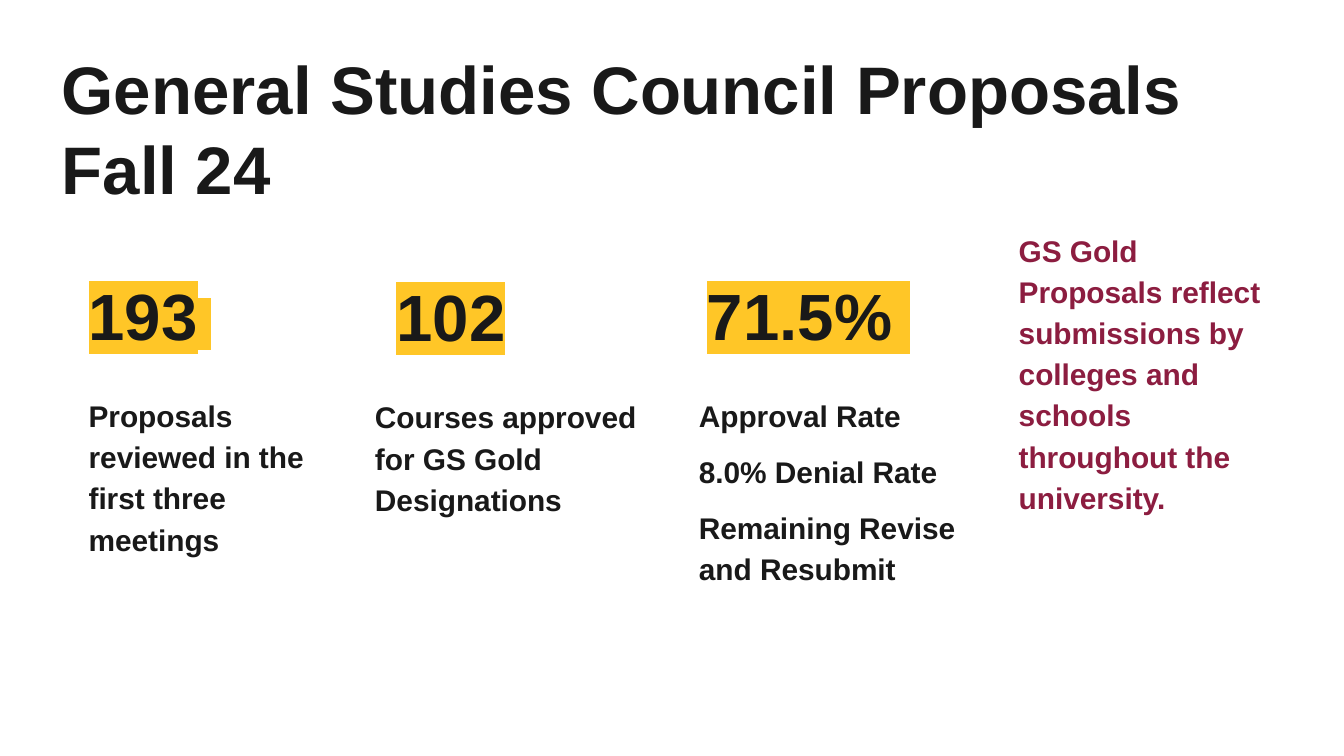
from lxml.etree import SubElement
from pptx import Presentation
from pptx.dml.color import RGBColor
from pptx.enum.shapes import MSO_SHAPE
from pptx.enum.text import MSO_ANCHOR, PP_ALIGN
from pptx.oxml.ns import qn
from pptx.util import Inches, Pt

INK = RGBColor(0x19, 0x19, 0x19)
MAROON = RGBColor(0x8C, 0x1D, 0x40)
GOLD = RGBColor(0xFF, 0xC6, 0x27)
WHITE = RGBColor(0xFF, 0xFF, 0xFF)
FONT = "Arial"


def set_frame(shape, left, top, right, bottom):
    """Set wrapping, top anchoring and insets, and return the text frame."""
    frame = shape.text_frame
    frame.word_wrap = True
    frame.vertical_anchor = MSO_ANCHOR.TOP
    frame.margin_left, frame.margin_top = Inches(left), Inches(top)
    frame.margin_right, frame.margin_bottom = Inches(right), Inches(bottom)
    return frame


def add_run(paragraph, text, size, color=INK, highlight=None):
    """Append a bold run, with an optional highlight color."""
    run = paragraph.add_run()
    run.text = text
    run.font.size = Pt(size)
    run.font.bold = True
    run.font.color.rgb = color
    if highlight is not None:
        mark = SubElement(run.font._element, qn("a:highlight"))
        SubElement(mark, qn("a:srgbClr")).set("val", str(highlight))
    run.font.name = FONT


def add_text_box(slide, left, top, width, height, insets):
    """Add a text box and return its text frame."""
    box = slide.shapes.add_textbox(Inches(left), Inches(top), Inches(width), Inches(height))
    return set_frame(box, *insets)


def add_title(slide, text):
    """Add the slide heading."""
    frame = add_text_box(slide, 0.46, 0.35, 9.2, 0.5, (0, 0, 0, 0))
    add_run(frame.paragraphs[0], text, 36)


def add_figure(slide, left, top, runs):
    """Add a white card with a large highlighted number."""
    card = slide.shapes.add_shape(
        MSO_SHAPE.RECTANGLE, Inches(left), Inches(top), Inches(2.13), Inches(1.85)
    )
    card.shadow.inherit = False
    card.fill.solid()
    card.fill.fore_color.rgb = WHITE
    card.line.fill.background()
    paragraph = set_frame(card, 0.2, 0.65, 0.1, 0.1).paragraphs[0]
    paragraph.alignment = PP_ALIGN.LEFT
    paragraph.line_spacing = 0.9
    for text, size in runs:
        add_run(paragraph, text, size, highlight=GOLD)


def add_body(slide, left, top, width, lines, color=INK):
    """Add a box of bold statements, one paragraph each."""
    frame = add_text_box(slide, left, top, width, 0.77, (0.2, 0.38, 0.1, 0.1))
    for index, line in enumerate(lines):
        paragraph = frame.add_paragraph() if index else frame.paragraphs[0]
        paragraph.line_spacing = 1.15
        if index:
            paragraph.space_before = Pt(8)
        add_run(paragraph, line, 16, color)


def main():
    """Build and save the slide."""
    presentation = Presentation()
    presentation.slide_width = Inches(10)
    presentation.slide_height = Inches(10 * 9 / 16)
    slide = presentation.slides.add_slide(presentation.slide_layouts[6])

    add_figure(slide, 0.46, 1.46, [("193", 35), (" ", 25)])
    add_body(slide, 0.46, 2.54, 2.04, ["Proposals reviewed in the first three meetings"])
    add_body(
        slide, 7.38, 1.31, 2.13,
        ["GS Gold Proposals reflect submissions by colleges and schools throughout the university."],
        MAROON,
    )
    add_figure(slide, 5.06, 1.46, [("71.5% ", 35)])
    add_body(
        slide, 5, 2.54, 2.38,
        ["Approval Rate", "8.0% Denial Rate", "Remaining Revise and Resubmit"],
    )
    add_figure(slide, 2.75, 1.47, [("102", 35)])
    add_body(slide, 2.59, 2.55, 2.29, ["Courses approved for GS Gold Designations"])
    add_title(slide, "General Studies Council Proposals Fall 24")
    presentation.save("out.pptx")


if __name__ == "__main__":
    main()
